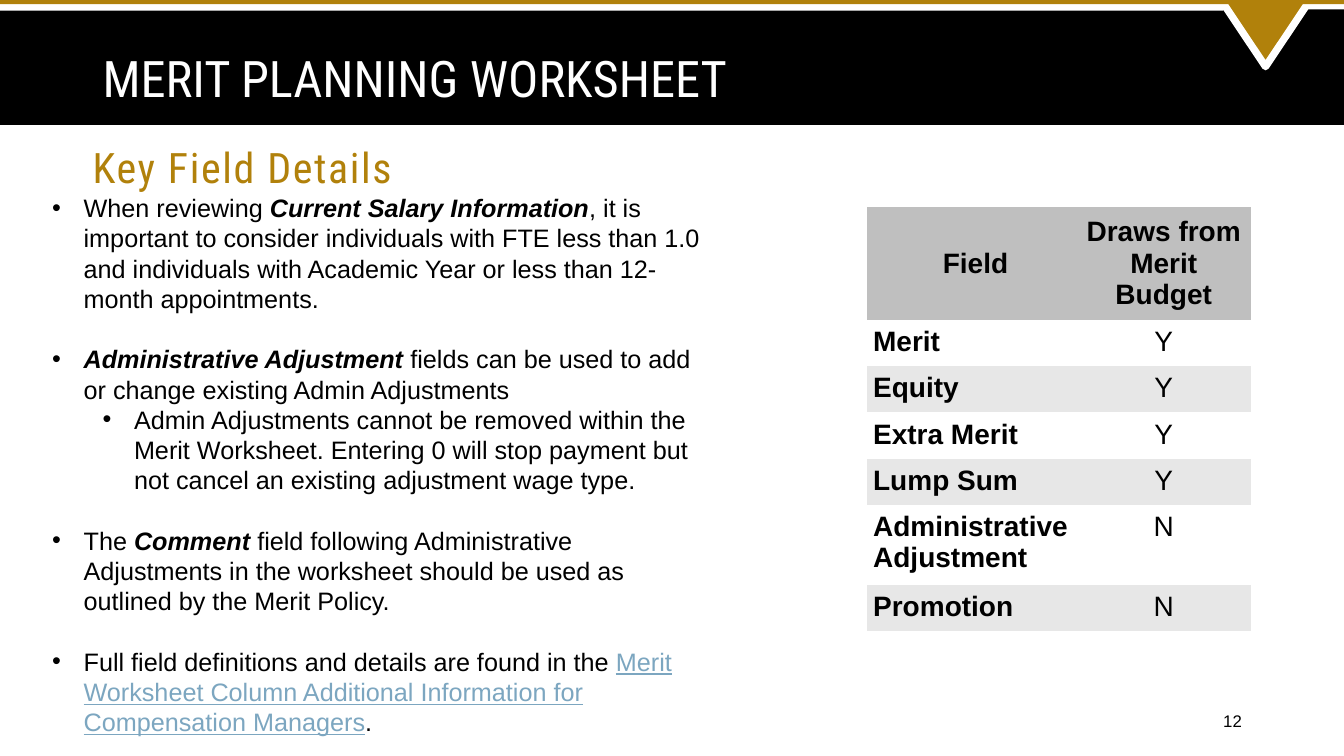
from dataclasses import dataclass

from lxml.etree import SubElement
from pptx import Presentation
from pptx.dml.color import RGBColor
from pptx.enum.shapes import MSO_SHAPE as Preset
from pptx.enum.text import MSO_ANCHOR as Anchor, PP_ALIGN as Align
from pptx.oxml.ns import qn
from pptx.util import Pt

COLORS = {
    "black": "000000",
    "white": "FFFFFF",
    "gold": "B1810B",
    "header": "BFBFBF",
    "band": "E7E7E7",
    "link": "7CA6C0",
}
BODY_FONT, HEADING_FONT = "Arial", "Roboto Condensed"
PLAIN_GRID = "{2D5ABB26-0587-4C30-8999-92F81FD0307C}"


@dataclass(frozen=True)
class Box:
    left: float
    top: float
    width: float
    height: float

    def lengths(self) -> tuple:
        return tuple(Pt(v) for v in (self.left, self.top, self.width, self.height))


@dataclass(frozen=True)
class Band:
    box: Box
    color: str
    preset: Preset = Preset.RECTANGLE
    outline: float = 0
    rotation: float = 0


@dataclass(frozen=True)
class Label:
    text: str
    box: Box
    font: dict
    color: str
    frame: dict
    paragraph: dict
    tracking: int = 0


@dataclass(frozen=True)
class Phrase:
    text: str
    style: str = "plain"


@dataclass(frozen=True)
class Bullet:
    phrases: tuple
    level: int = 0
    gap: float = 0


STYLES = {
    "plain": {},
    "key": {"bold": True, "italic": True},
    "link": {"underline": True},
}
NO_INSETS = {f"margin_{side}": 0 for side in ("left", "top", "right", "bottom")}
CELL_INSETS = {side: Pt(4.5) for side in NO_INSETS}

BANDS = (
    Band(Box(0, 0, 960, 89.3), "black"),
    Band(Box(871.2, -1.4, 65.5, 49), "gold", Preset.ISOSCELES_TRIANGLE, 5.25, 180),
    Band(Box(-1, -5.4, 874.8, 13), "white"),
    Band(Box(931.3, -5.4, 30.2, 12.2), "white"),
    Band(Box(-0.7, -5, 962.6, 7.9), "gold"),
)

LABELS = (
    Label("MERIT PLANNING WORKSHEET", Box(66.2, 28.8, 820, 59),
          {"name": HEADING_FONT, "size": Pt(36)}, "white",
          {"vertical_anchor": Anchor.MIDDLE}, {"line_spacing": 0.9}),
    Label("Key Field Details", Box(66.2, 100.8, 828, 33.1),
          {"name": HEADING_FONT, "size": Pt(30)}, "gold",
          NO_INSETS, {"space_after": Pt(10)}, tracking=120),
    Label("12", Box(678.2, 500.4, 216, 28.8),
          {"name": BODY_FONT, "size": Pt(12)}, "black",
          {"vertical_anchor": Anchor.MIDDLE}, {"alignment": Align.RIGHT}),
)

BLOCK_GAP = 21.6
BULLETS = (
    Bullet((
        Phrase("When reviewing "),
        Phrase("Current Salary Information", "key"),
        Phrase(", it is important to consider individuals with FTE less than 1.0 "
               "and individuals with Academic Year or less than 12- month appointments."),
    )),
    Bullet((
        Phrase("Administrative Adjustment ", "key"),
        Phrase("fields can be used to add or change existing Admin Adjustments"),
    ), gap=BLOCK_GAP),
    Bullet((
        Phrase("Admin Adjustments cannot be removed within the Merit Worksheet. "
               "Entering 0 will stop payment but not cancel an existing adjustment wage type."),
    ), level=1),
    Bullet((
        Phrase("The"),
        Phrase(" Comment", "key"),
        Phrase(" field following Administrative Adjustments in the worksheet "
               "should be used as outlined by the Merit Policy."),
    ), gap=BLOCK_GAP),
    Bullet((
        Phrase("Full field definitions and details are found in the "),
        Phrase("Merit Worksheet Column Additional Information for Compensation Managers", "link"),
        Phrase("."),
    ), gap=BLOCK_GAP),
)

FIELDS = (
    (" Field", "Draws from Merit Budget"),
    ("Merit", "Y"),
    ("Equity", "Y"),
    ("Extra Merit", "Y"),
    ("Lump Sum", "Y"),
    ("Administrative Adjustment", "N"),
    ("Promotion", "N"),
)
COLUMN_WIDTHS = (149.8, 124.6)
ROW_HEIGHTS = (46.8, 28.8, 28.8, 28.8, 28.8, 46.8, 28.8)


def rgb(color: str) -> RGBColor:
    return RGBColor.from_string(COLORS[color])


def apply_format(target, values: dict) -> None:
    for attribute, value in values.items():
        setattr(target, attribute, value)


def add_run(paragraph, text: str, font: dict, color: str):
    run = paragraph.add_run()
    run.text = text
    apply_format(run.font, font)
    run.font.color.rgb = rgb(color)
    return run


def draw_band(slide, band: Band) -> None:
    shape = slide.shapes.add_shape(band.preset, *band.box.lengths())
    shape.shadow.inherit = False
    shape.rotation = band.rotation
    shape.fill.solid()
    shape.fill.fore_color.rgb = rgb(band.color)
    if band.outline:
        shape.line.color.rgb = rgb("white")
        shape.line.width = Pt(band.outline)
    else:
        shape.line.fill.background()


def draw_label(slide, label: Label) -> None:
    frame = slide.shapes.add_textbox(*label.box.lengths()).text_frame
    apply_format(frame, {"word_wrap": True, **label.frame})
    paragraph = frame.paragraphs[0]
    apply_format(paragraph, label.paragraph)
    run = add_run(paragraph, label.text, label.font, label.color)
    if label.tracking:
        run._r.get_or_add_rPr().set("spc", str(label.tracking))


def draw_bullets(slide, box: Box, bullets: tuple) -> None:
    frame = slide.shapes.add_textbox(*box.lengths()).text_frame
    frame.word_wrap = True
    for index, bullet in enumerate(bullets):
        paragraph = frame.add_paragraph() if index else frame.paragraphs[0]
        paragraph.level = bullet.level
        if bullet.gap:
            paragraph.space_before = Pt(bullet.gap)
        properties = paragraph._p.get_or_add_pPr()
        properties.set("marL", str(Pt(22.5 + 36 * bullet.level)))
        properties.set("indent", str(Pt(-22.5)))
        SubElement(properties, qn("a:buFont"), typeface=BODY_FONT)
        SubElement(properties, qn("a:buChar"), char="•")
        for phrase in bullet.phrases:
            font = {"name": BODY_FONT, "size": Pt(18), **STYLES[phrase.style]}
            add_run(paragraph, phrase.text, font, "link" if phrase.style == "link" else "black")


def draw_fields(slide, box: Box) -> None:
    table = slide.shapes.add_table(len(FIELDS), len(COLUMN_WIDTHS), *box.lengths()).table
    table._tbl.tblPr.find(qn("a:tableStyleId")).text = PLAIN_GRID
    for column, width in zip(table.columns, COLUMN_WIDTHS):
        column.width = Pt(width)
    for r, (values, height) in enumerate(zip(FIELDS, ROW_HEIGHTS)):
        table.rows[r].height = Pt(height)
        for c, value in enumerate(values):
            cell = table.cell(r, c)
            anchor = Anchor.TOP if r else Anchor.MIDDLE
            apply_format(cell, {"vertical_anchor": anchor, **CELL_INSETS})
            if r % 2:
                cell.fill.background()
            else:
                cell.fill.solid()
                cell.fill.fore_color.rgb = rgb("band" if r else "header")
            paragraph = cell.text_frame.paragraphs[0]
            paragraph.alignment = Align.LEFT if r and c == 0 else Align.CENTER
            font = {"name": BODY_FONT, "size": Pt(20), "bold": r == 0 or c == 0}
            add_run(paragraph, value, font, "black")


def main() -> None:
    deck = Presentation()
    apply_format(deck, {"slide_width": Pt(960), "slide_height": Pt(540)})
    slide = deck.slides.add_slide(deck.slide_layouts[6])
    for band in BANDS:
        draw_band(slide, band)
    for label in LABELS:
        draw_label(slide, label)
    draw_fields(slide, Box(619.2, 147.6, sum(COLUMN_WIDTHS), sum(ROW_HEIGHTS)))
    draw_bullets(slide, Box(30.2, 133.9, 484.6, 443.5), BULLETS)
    deck.save("out.pptx")


if __name__ == "__main__":
    main()
